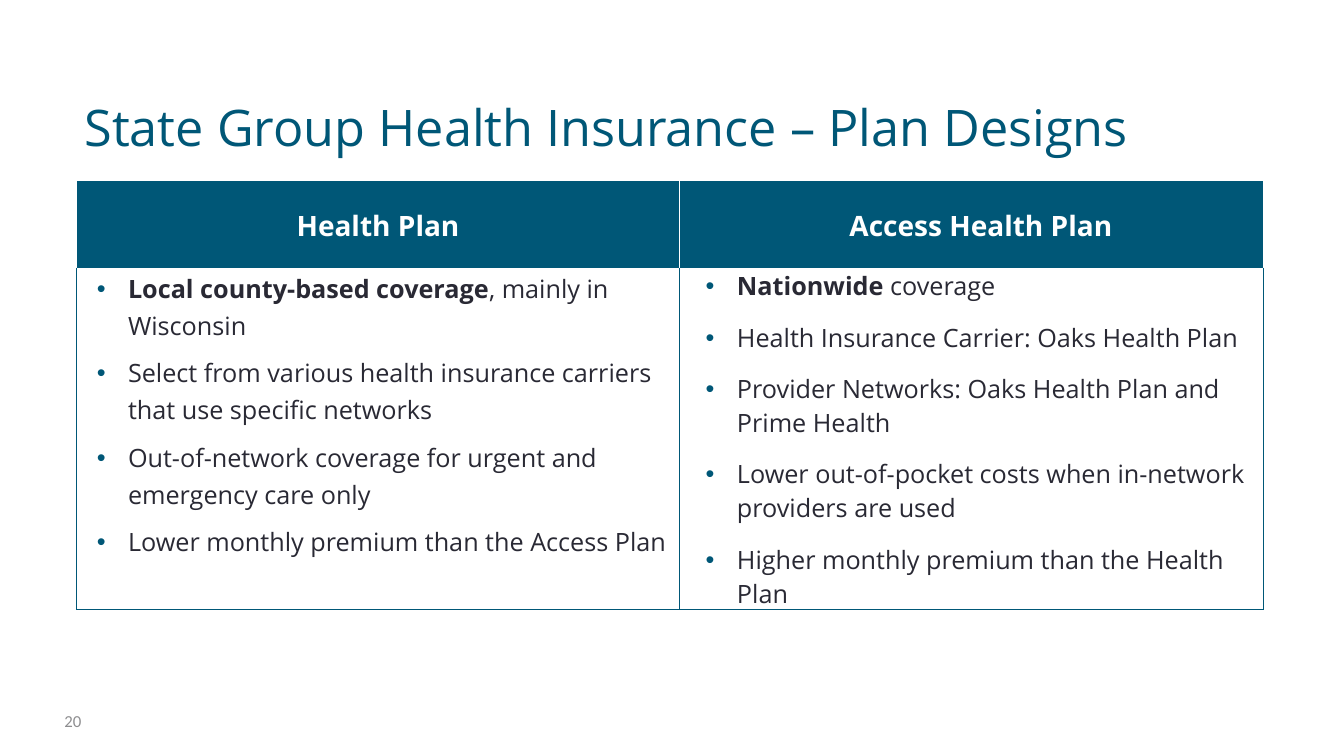
from lxml.etree import SubElement
from pptx import Presentation
from pptx.dml.color import RGBColor
from pptx.enum.text import MSO_ANCHOR as Anchor, PP_ALIGN as Align
from pptx.oxml.ns import qn
from pptx.util import Inches, Pt

# Content: ** is not used; each paragraph is a list of (text, bold) spans
TITLE = "State Group Health Insurance – Plan Designs"
PAGE_NUMBER = "20"
PLANS = [
    {
        "name": "Health Plan", "name_indent": 0, "indent": 0.44,
        "line": 1.07, "before": 0, "after": 8,
        "points": [
            [("Local county-based coverage", True), (", mainly in Wisconsin", False)],
            [("Select from various health insurance carriers that use specific networks", False)],
            [("Out-of-network coverage for urgent and emergency care only", False)],
            [("Lower monthly premium than the Access Plan", False)],
        ],
    },
    {
        "name": "Access Health Plan", "name_indent": 0.19, "indent": 0.5,
        "line": 1.0, "before": 6, "after": 6,
        "points": [
            [("Nationwide", True), (" coverage", False)],
            [("Health Insurance Carrier: Oaks Health Plan", False)],
            [("Provider Networks: Oaks Health Plan and Prime Health", False)],
            [("Lower out-of-pocket costs when in-network providers are used", False)],
            [("Higher monthly premium than the Health Plan", False)],
        ],
    },
]
COLORS = {"teal": "005777", "ink": "292934", "gray": "8E8E90", "white": "FFFFFF"}
COLUMNS = [5.98, 5.79]
ROWS = [0.87, 3.39]
HANGING = 0.31


def style(span, size, color, bold=False, font="Open Sans"):
    span.font.name = font
    span.font.size = Pt(size)
    span.font.bold = bold
    span.font.color.rgb = RGBColor.from_string(COLORS[color])


def add_label(page, text, place, anchor, size, color, font, bottom):
    box = page.shapes.add_textbox(*[Inches(length) for length in place])
    frame = box.text_frame
    frame.word_wrap = True
    frame.vertical_anchor = anchor
    frame.margin_bottom = Inches(bottom)
    frame.text = text
    style(frame.paragraphs[0].runs[0], size, color, font=font)


def set_indent(para, left, first=0.0):
    props = para._p.get_or_add_pPr()
    props.set("marL", str(Inches(left)))
    props.set("indent", str(Inches(first)))
    return props


def add_bullet(para, left):
    props = set_indent(para, left, -HANGING)
    color = SubElement(props, qn("a:buClr"))
    SubElement(color, qn("a:srgbClr"), val=COLORS["teal"])
    SubElement(props, qn("a:buFont"), typeface="Arial")
    SubElement(props, qn("a:buChar"), char="•")


def set_borders(cell, colors):
    props = cell._tc.get_or_add_tcPr()
    for position, (side, color) in enumerate(zip("LRTB", colors)):
        line = props.makeelement(qn(f"a:ln{side}"), {"w": str(Pt(1))})
        fill = SubElement(line, qn("a:solidFill"))
        SubElement(fill, qn("a:srgbClr"), val=COLORS[color])
        props.insert(position, line)


def set_margins(cell):
    cell.margin_left = cell.margin_right = Inches(0.07)
    cell.margin_top, cell.margin_bottom = Inches(0.01), 0


def fill_header(cell, plan):
    set_margins(cell)
    cell.vertical_anchor = Anchor.MIDDLE
    cell.fill.solid()
    cell.fill.fore_color.rgb = RGBColor.from_string(COLORS["teal"])
    set_borders(cell, ["white"] * 4)
    cell.text_frame.text = plan["name"]
    para = cell.text_frame.paragraphs[0]
    set_indent(para, plan["name_indent"])
    para.alignment = Align.CENTER
    para.line_spacing, para.space_after = 1.07, Pt(8)
    style(para.runs[0], 20, "white", True)


def fill_body(cell, plan):
    set_margins(cell)
    cell.fill.background()
    set_borders(cell, ["teal", "teal", "white", "teal"])
    frame = cell.text_frame
    for index, point in enumerate(plan["points"]):
        para = frame.add_paragraph() if index else frame.paragraphs[0]
        add_bullet(para, plan["indent"])
        para.line_spacing = plan["line"]
        para.space_before = Pt(plan["before"] if index else 0)
        para.space_after = Pt(plan["after"])
        for text, bold in point:
            span = para.add_run()
            span.text = text
            style(span, 18, "ink", bold)


def main():
    deck = Presentation()
    deck.slide_width, deck.slide_height = Inches(13.33), Inches(7.5)
    page = deck.slides.add_slide(deck.slide_layouts[6])

    # Title and page number
    add_label(page, TITLE, (0.74, 0.3, 11.94, 1.25), Anchor.BOTTOM, 36, "teal", "Open Sans", 0)
    add_label(page, PAGE_NUMBER, (0.54, 6.95, 0.56, 0.4), Anchor.MIDDLE, 12, "gray", "Calibri", 0.05)

    # Plan comparison table
    table = page.shapes.add_table(
        len(ROWS), len(COLUMNS), Inches(0.76), Inches(1.79),
        Inches(sum(COLUMNS)), Inches(sum(ROWS))).table
    table.horz_banding = False
    for row, height in zip(table.rows, ROWS):
        row.height = Inches(height)
    for index, (plan, width) in enumerate(zip(PLANS, COLUMNS)):
        table.columns[index].width = Inches(width)
        fill_header(table.cell(0, index), plan)
        fill_body(table.cell(1, index), plan)

    deck.save("out.pptx")


if __name__ == "__main__":
    main()
